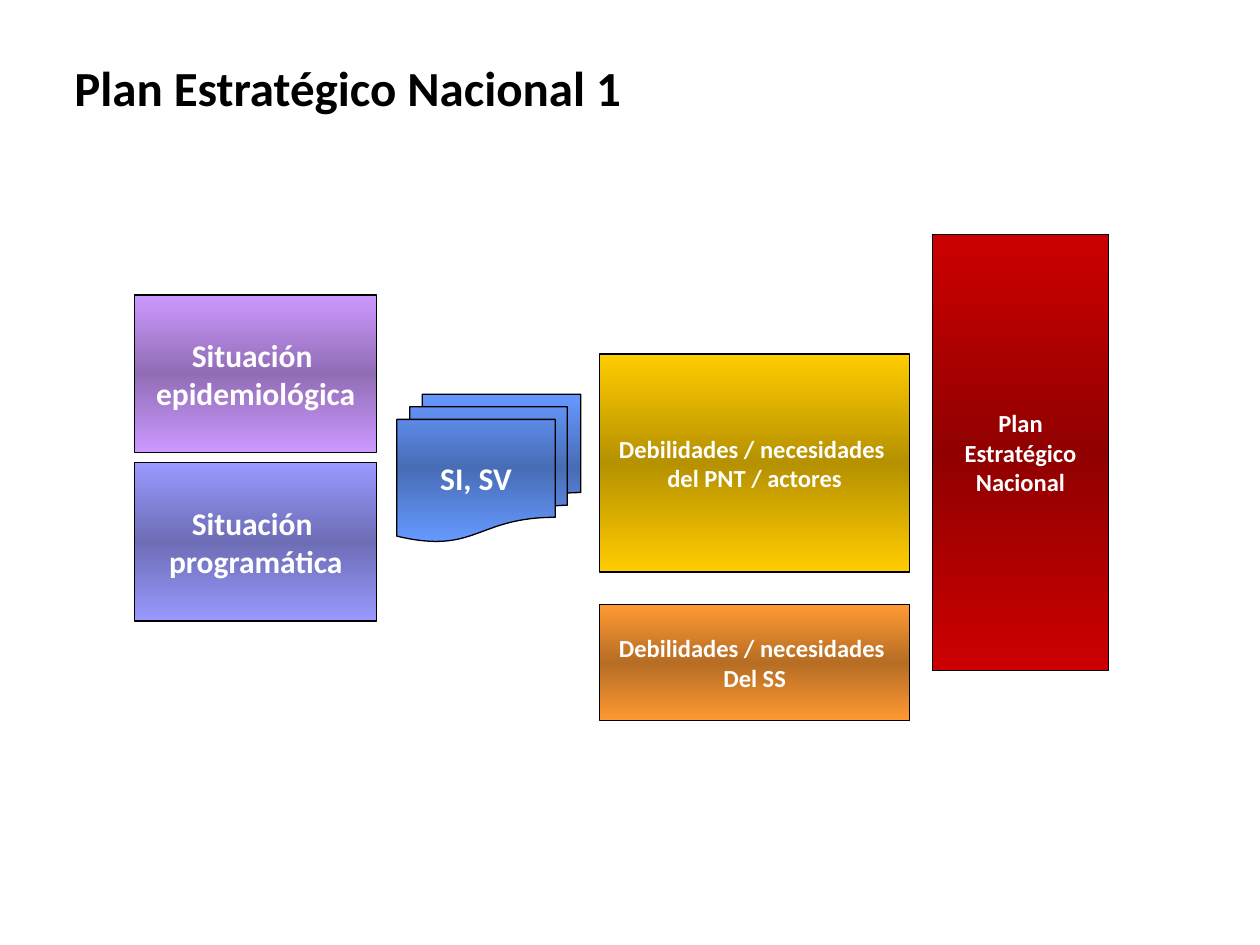
"""Build the national strategic plan slide."""
from copy import deepcopy
from dataclasses import dataclass

from lxml import etree
from pptx import Presentation
from pptx.dml.color import RGBColor
from pptx.enum.shapes import MSO_SHAPE
from pptx.enum.text import MSO_ANCHOR, MSO_AUTO_SIZE, PP_ALIGN
from pptx.oxml.ns import qn
from pptx.util import Inches, Pt

RECTANGLE = MSO_SHAPE.RECTANGLE
DOCUMENTS = MSO_SHAPE.FLOWCHART_MULTIDOCUMENT
MIDDLE = MSO_ANCHOR.MIDDLE
CENTER, LEFT = PP_ALIGN.CENTER, PP_ALIGN.LEFT
FIT_TEXT = MSO_AUTO_SIZE.SHAPE_TO_FIT_TEXT

BLACK = RGBColor(0x00, 0x00, 0x00)
WHITE = RGBColor(0xFF, 0xFF, 0xFF)
PURPLE = RGBColor(0xCC, 0x99, 0xFF)
LAVENDER = RGBColor(0x99, 0x99, 0xFF)
BLUE = RGBColor(0x66, 0x99, 0xFF)
GOLD = RGBColor(0xFF, 0xCC, 0x00)
ORANGE = RGBColor(0xFF, 0x99, 0x33)
RED = RGBColor(0xCC, 0x00, 0x00)

MIDDLE_SHADE = "46275"
SITUATION_LEFT, SITUATION_WIDTH = 1.07, 1.92
NEEDS_LEFT, NEEDS_WIDTH = 4.76, 2.46


@dataclass(frozen=True)
class Block:
    left: float
    top: float
    width: float
    height: float
    color: RGBColor
    lines: tuple[str, ...]
    size: int
    outline: MSO_SHAPE = RECTANGLE
    wrap: bool = False


BLOCKS = (
    Block(SITUATION_LEFT, 2.34, SITUATION_WIDTH, 1.25, PURPLE,
          ("Situación ", "epidemiológica"), 18),
    Block(SITUATION_LEFT, 3.67, SITUATION_WIDTH, 1.26, LAVENDER,
          ("Situación ", "programática"), 18),
    Block(3.15, 3.13, 1.46, 1.17, BLUE, ("SI, SV",), 18, outline=DOCUMENTS),
    Block(NEEDS_LEFT, 2.81, NEEDS_WIDTH, 1.73, GOLD,
          ("Debilidades / necesidades ", "del PNT / actores"), 14),
    Block(NEEDS_LEFT, 4.8, NEEDS_WIDTH, 0.92, ORANGE,
          ("Debilidades / necesidades ", "Del SS"), 14),
    Block(7.4, 1.86, 1.4, 3.46, RED, ("Plan Estratégico Nacional",), 14, wrap=True),
)


def apply_format(target, values: dict) -> None:
    """Set every named attribute of the target."""
    for name, value in values.items():
        setattr(target, name, value)


def write_lines(frame, lines: tuple[str, ...], size: int, color: RGBColor,
                alignment: PP_ALIGN) -> None:
    """Write one bold paragraph per line."""
    frame.text = "\n".join(lines)
    for paragraph in frame.paragraphs:
        paragraph.alignment = alignment
        for run in paragraph.runs:
            apply_format(run.font, {"name": "Calibri", "size": Pt(size), "bold": True})
            run.font.color.rgb = color


def fill_with_dark_middle(shape, color: RGBColor) -> None:
    """Fill with a vertical gradient that darkens halfway down."""
    shape.fill.gradient()
    shape.fill.gradient_angle = 270
    stop_list = shape.element.spPr.find(qn("a:gradFill")).find(qn("a:gsLst"))
    stop_list.insert(1, deepcopy(stop_list[0]))
    for position, stop in zip((0, 0.5, 1), shape.fill.gradient_stops):
        stop.position = position
        stop.color.rgb = color
    etree.SubElement(stop_list[1][0], qn("a:shade"), val=MIDDLE_SHADE)


def draw_block(slide, block: Block) -> None:
    """Draw one labelled block."""
    bounds = map(Inches, (block.left, block.top, block.width, block.height))
    shape = slide.shapes.add_shape(block.outline, *bounds)
    shape.shadow.inherit = False
    fill_with_dark_middle(shape, block.color)
    shape.line.color.rgb = BLACK
    shape.line.width = Pt(0.75)
    apply_format(shape.text_frame, {"word_wrap": block.wrap, "vertical_anchor": MIDDLE})
    write_lines(shape.text_frame, block.lines, block.size, WHITE, CENTER)


def write_title(slide, heading: str) -> None:
    """Place and format the slide title."""
    title = slide.shapes.title
    apply_format(title, {"left": Inches(0.49), "top": Inches(0.36),
                         "width": Inches(8.72), "height": Inches(0.67)})
    inset = Inches(0.1)
    apply_format(title.text_frame, {
        "margin_left": inset, "margin_top": inset, "margin_right": inset,
        "margin_bottom": inset, "word_wrap": True, "auto_size": FIT_TEXT,
        "vertical_anchor": MSO_ANCHOR.TOP,
    })
    write_lines(title.text_frame, (heading,), 28, BLACK, LEFT)


def main() -> None:
    """Create and save the presentation."""
    presentation = Presentation()
    presentation.slide_width = Inches(10)
    presentation.slide_height = Inches(7.5)
    slide = presentation.slides.add_slide(presentation.slide_layouts.get_by_name("Title Only"))
    write_title(slide, "Plan Estratégico Nacional 1")
    for block in BLOCKS:
        draw_block(slide, block)
    presentation.save("out.pptx")


if __name__ == "__main__":
    main()
